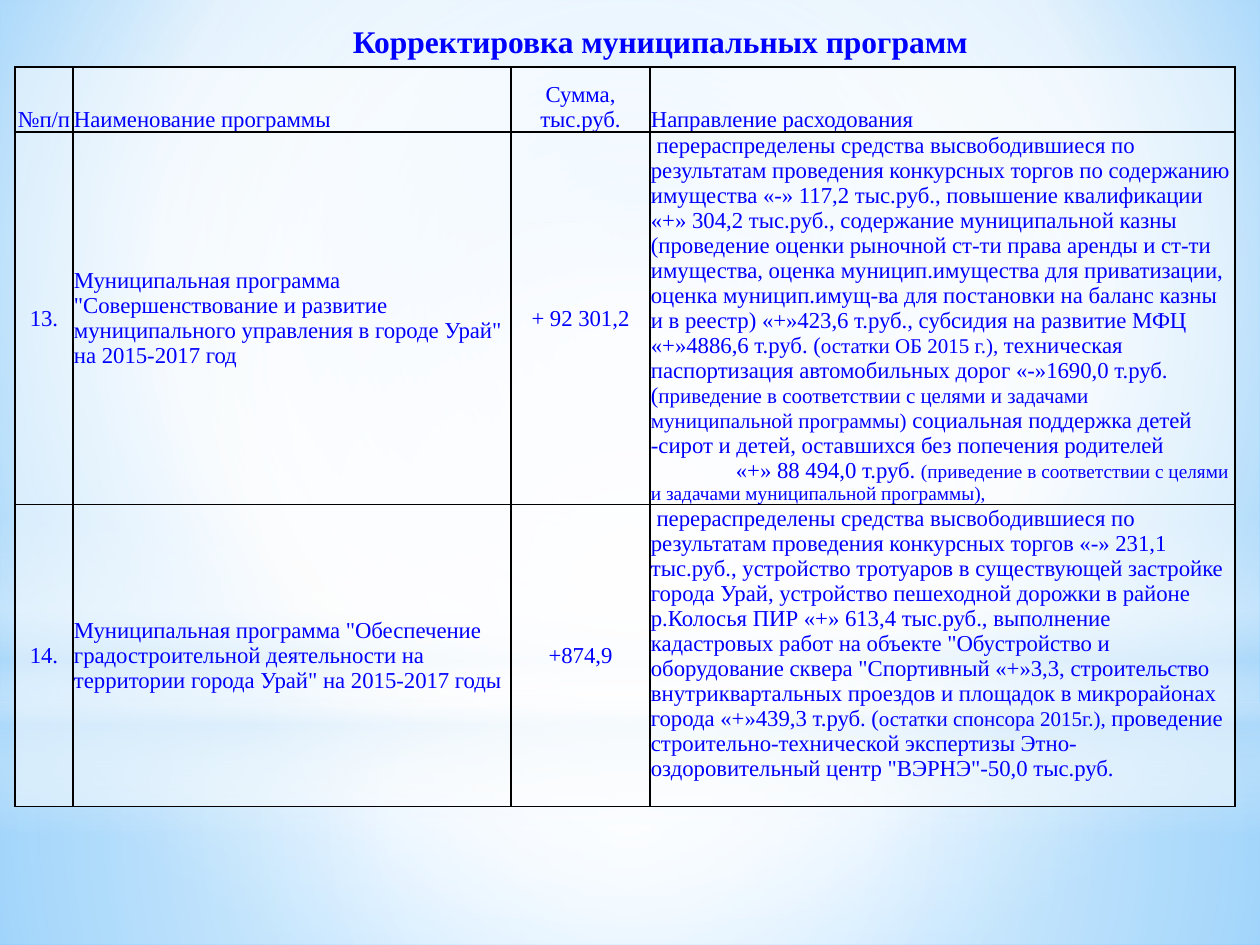
from lxml import etree
from pptx import Presentation
from pptx import util as u
from pptx.dml.color import RGBColor
from pptx.enum import shapes, text
from pptx.oxml.ns import qn

BLUE = RGBColor(0x00, 0x00, 0xFF)
WHITE = RGBColor(0xFF, 0xFF, 0xFF)
BLACK = RGBColor(0x00, 0x00, 0x00)
PALE = RGBColor(0xB4, 0xDC, 0xFA)
SKY = RGBColor(0x9E, 0xD5, 0xFF)
AZURE = RGBColor(0x5B, 0xB9, 0xFF)
FONT = "Times New Roman"
BODY, SMALL, TINY = 13, 12, 11

TITLE = "Корректировка муниципальных программ"
HEADER = ["№п/п", "Наименование программы", "Сумма, тыс.руб.", "Направление расходования"]
PROGRAMS = [
    ("13.",
     'Муниципальная программа "Совершенствование и развитие муниципального управления в городе Урай" на 2015-2017 год',
     "+ 92 301,2",
     [[(" перераспределены средства высвободившиеся по результатам проведения конкурсных торгов "
        "по содержанию имущества «-» 117,2 тыс.руб., повышение квалификации «+» 304,2 тыс.руб., "
        "содержание муниципальной казны (проведение оценки рыночной ст-ти права аренды и ст-ти "
        "имущества, оценка муницип.имущества для приватизации, оценка муницип.имущ-ва для "
        "постановки на баланс казны и в реестр) «+»423,6 т.руб., субсидия на развитие МФЦ "
        "«+»4886,6 т.руб. (", BODY),
       ("остатки ОБ 2015 г.), ", SMALL),
       ("техническая паспортизация автомобильных дорог «-»1690,0 т.руб. (", BODY),
       ("приведение в соответствии с целями и задачами муниципальной программы) ", SMALL),
       ("социальная поддержка детей -сирот и детей, оставшихся без попечения родителей", BODY)],
      [("«+» 88 494,0 т.руб. ", BODY),
       ("(приведение в соответствии с целями и задачами муниципальной программы),", TINY)]]),
    ("14.",
     'Муниципальная программа "Обеспечение градостроительной деятельности на территории города Урай" на 2015-2017 годы',
     "+874,9",
     [[(" перераспределены средства высвободившиеся по результатам проведения конкурсных торгов "
        "«-» 231,1 тыс.руб., устройство тротуаров в существующей застройке города Урай, устройство "
        "пешеходной дорожки в районе р.Колосья ПИР «+» 613,4 тыс.руб., выполнение кадастровых работ "
        'на объекте "Обустройство и оборудование сквера "Спортивный «+»3,3, строительство '
        "внутриквартальных проездов и площадок в микрорайонах города «+»439,3 т.руб. (", BODY),
       ("остатки спонсора 2015г.), ", SMALL),
       ("проведение строительно-технической экспертизы Этно-оздоровительный центр "
        '"ВЭРНЭ"-50,0 тыс.руб.', BODY)]]),
]

COLUMNS = [58, 438, 139, 585]
ROWS = [65, 372, 302]
TABLE_LEFT, TABLE_TOP = 15, 67
CENTRED_COLUMNS = (0, 2)
SECOND_LINE_INDENT = 85
LAST_CELL_BOTTOM = 25

CENTRE = (50, 50, 50, 50)
BACKGROUND = [(0, SKY, 100), (60, WHITE, 100), (100, AZURE, 100)]
RECTANGLE, OVAL = shapes.MSO_SHAPE.RECTANGLE, shapes.MSO_SHAPE.OVAL
GLOWS = [
    (RECTANGLE, (0, 703, 1260, 242), CENTRE,
     [(0, WHITE, 91), (37, WHITE, 76), (100, PALE, 79)]),
    (RECTANGLE, (0, 0, 1260, 703), CENTRE,
     [(0, WHITE, 89), (48, WHITE, 62), (100, PALE, 79)]),
    (RECTANGLE, (0, 519, 1260, 315), None,
     [(0, WHITE, 0), (29, WHITE, 30), (45, PALE, 40), (55, WHITE, 26), (65, PALE, 60), (100, WHITE, 0)]),
    (OVAL, (0, 221, 1260, 703), CENTRE, [(0, WHITE, 100), (56, WHITE, 0)]),
]


def px(length):
    return u.Emu(round(length * 914400 / 126))


def add(parent, tag, **attributes):
    return etree.SubElement(parent, qn(tag), {key: str(value) for key, value in attributes.items()})


def add_colour(parent, colour, opacity=100):
    element = add(parent, "a:srgbClr", val=colour)
    if opacity < 100:
        add(element, "a:alpha", val=opacity * 1000)


def set_gradient(fill, owner, stops, focus):
    fill.gradient()
    gradient = next(owner.iter(qn("a:gradFill")))
    for child in list(gradient):
        gradient.remove(child)
    stop_list = add(gradient, "a:gsLst")
    for position, colour, opacity in stops:
        add_colour(add(stop_list, "a:gs", pos=position * 1000), colour, opacity)
    if focus:
        circle = add(gradient, "a:path", path="circle")
        add(circle, "a:fillToRect", **{side: value * 1000 for side, value in zip("ltrb", focus)})
    else:
        add(gradient, "a:lin", ang=90 * 60000, scaled=0)


def format_run(run, size, bold=False):
    run.font.name = FONT
    run.font.size = u.Pt(size)
    run.font.bold = bold
    run.font.color.rgb = BLUE


def format_cell(cell):
    cell.margin_left = cell.margin_right = cell.margin_top = px(1)
    cell.margin_bottom = 0
    properties = cell._tc.get_or_add_tcPr()
    for side in "LRTB":
        border = add(properties, f"a:ln{side}", w=u.Pt(1))
        add_colour(add(border, "a:solidFill"), BLACK)
    cell.fill.solid()
    cell.fill.fore_color.rgb = WHITE
    add(properties.find(qn("a:solidFill"))[0], "a:alpha", val=46000)


def write_cell(cell, content, centred):
    paragraphs = [[(content, BODY)]] if isinstance(content, str) else content
    frame = cell.text_frame
    for index, parts in enumerate(paragraphs):
        paragraph = frame.add_paragraph() if index else frame.paragraphs[0]
        paragraph.alignment = text.PP_ALIGN.CENTER if centred else text.PP_ALIGN.LEFT
        if index:
            properties = paragraph._p.get_or_add_pPr()
            properties.set("marL", "0")
            properties.set("indent", str(px(SECOND_LINE_INDENT)))
        for words, size in parts:
            run = paragraph.add_run()
            run.text = words
            format_run(run, size)


def main():
    presentation = Presentation()
    presentation.slide_width, presentation.slide_height = px(1260), px(945)
    slide = presentation.slides.add_slide(presentation.slide_layouts[5])
    set_gradient(slide.background.fill, slide._element, BACKGROUND, (20, 10, 20, 60))

    for kind, box, focus, stops in GLOWS:
        shape = slide.shapes.add_shape(kind, *map(px, box))
        shape.shadow.inherit = False
        shape.line.fill.background()
        set_gradient(shape.fill, shape._element, stops, focus)

    frame = slide.shapes.add_table(len(ROWS), len(COLUMNS), px(TABLE_LEFT), px(TABLE_TOP),
                                   px(sum(COLUMNS)), px(sum(ROWS)))
    table = frame.table
    table.first_row = table.horz_banding = False
    for column, width in zip(table.columns, COLUMNS):
        column.width = px(width)
    for row, height in zip(table.rows, ROWS):
        row.height = px(height)
    for row, contents in enumerate([HEADER, *PROGRAMS]):
        for column, content in enumerate(contents):
            cell = table.cell(row, column)
            format_cell(cell)
            at_bottom = row == 0 or column == len(COLUMNS) - 1
            cell.vertical_anchor = text.MSO_ANCHOR.BOTTOM if at_bottom else text.MSO_ANCHOR.MIDDLE
            write_cell(cell, content, column in CENTRED_COLUMNS)
    table.cell(len(ROWS) - 1, len(COLUMNS) - 1).margin_bottom = px(LAST_CELL_BOTTOM)

    title = slide.shapes.title
    title.left, title.top, title.width, title.height = map(px, (105, 16, 1111, 50))
    title.text_frame.text = TITLE
    title.text_frame.vertical_anchor = text.MSO_ANCHOR.TOP
    paragraph = title.text_frame.paragraphs[0]
    paragraph.alignment = text.PP_ALIGN.CENTER
    format_run(paragraph.runs[0], 18, bold=True)
    slide.shapes._spTree.append(title._element)

    presentation.save("out.pptx")


if __name__ == "__main__":
    main()
